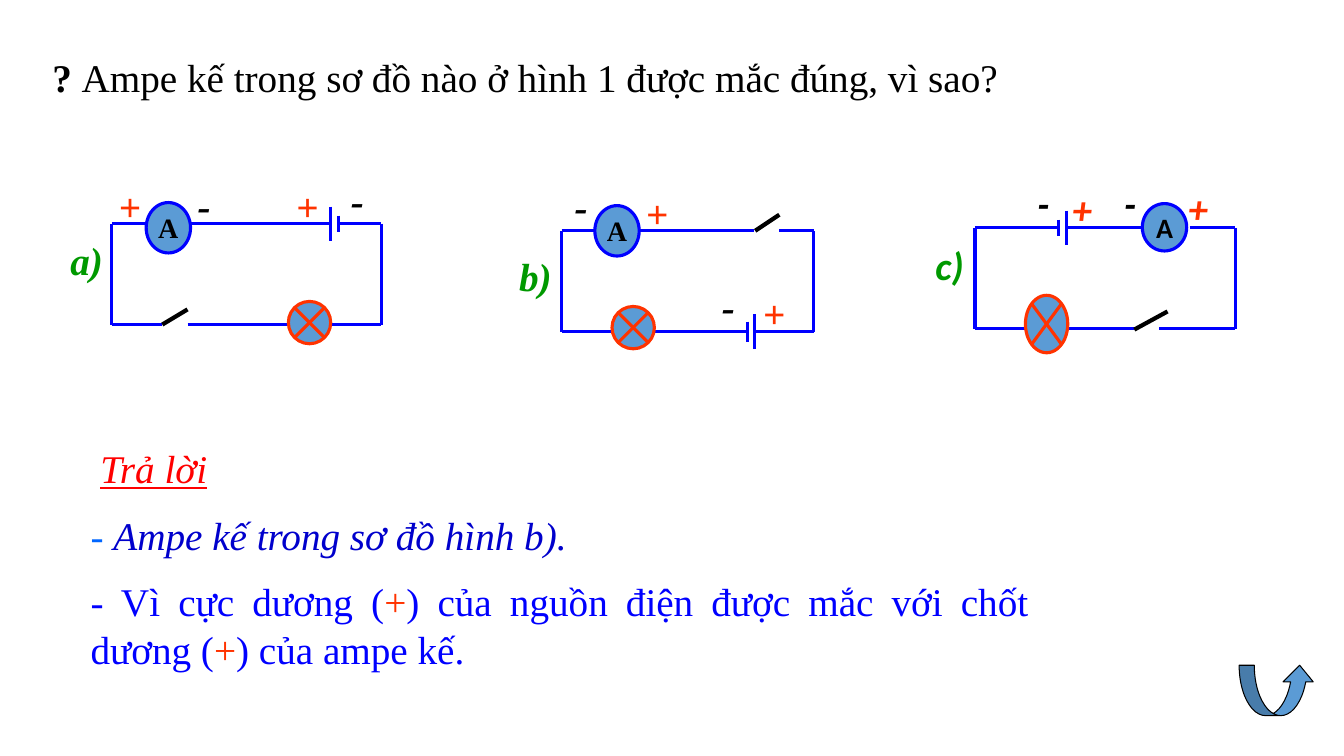
from dataclasses import dataclass

from lxml.etree import SubElement
from pptx import Presentation
from pptx.dml.color import RGBColor
from pptx.enum.shapes import MSO_CONNECTOR, MSO_SHAPE
from pptx.enum.text import MSO_ANCHOR, PP_ALIGN
from pptx.oxml.ns import qn
from pptx.util import Inches, Pt


@dataclass(frozen=True)
class Theme:
    serif: str = "Times New Roman"
    sans: str = "Calibri"
    ink: str = "000000"
    wire: str = "0000FF"
    fill: str = "5B9BD5"
    plus: str = "FF3300"
    label: str = "009900"
    heading: str = "FF0000"
    dash: str = "0066FF"
    answer: str = "0000CC"
    body_size: int = 28
    meter_size: int = 20
    wire_width: float = 2.25
    switch_width: float = 3
    arrow_width: float = 0.75


THEME = Theme()


@dataclass(frozen=True)
class Circuit:
    """One diagram; all inner places are inches from its top left corner."""
    label: str
    label_at: tuple
    font: str
    corner: tuple
    width: float
    top_wires: tuple
    bottom_wires: tuple
    switch: tuple   # from x, y to x, y
    battery: tuple  # short plate x, long plate x, y, half of short plate
    meter: tuple    # left, top, width, height
    lamp: tuple
    pluses: tuple
    minuses: tuple


CIRCUITS = (
    Circuit("a)", (-0.51, 0.08), THEME.serif, (1.11, 2.22), 2.67,
            top_wires=((0, 0.42), (0.75, 2.17), (2.25, 2.67)),
            bottom_wires=((0, 0.5), (0.75, 1.75), (2.17, 2.67)),
            switch=(0.5, 1, 0.75, 0.85), battery=(2.25, 2.17, 0, 0.08),
            meter=(0.34, -0.21, 0.44, 0.5), lamp=(1.75, 0.77, 0.42, 0.42),
            pluses=((-0.03, -0.41), (1.73, -0.41)),
            minuses=((0.85, -0.42), (2.37, -0.47))),
    Circuit("b)", (-0.52, 0.16), THEME.serif, (5.57, 2.29), 2.5,
            top_wires=((0, 0.33), (0.75, 1.91), (2.16, 2.5)),
            bottom_wires=((0, 0.5), (0.91, 1.83), (1.91, 2.5)),
            switch=(1.92, 0, 2.16, -0.16), battery=(1.84, 1.91, 1, 0.1),
            meter=(0.33, -0.25, 0.44, 0.5), lamp=(0.5, 0.75, 0.42, 0.42),
            pluses=((0.74, -0.41), (1.9, 0.58)),
            minuses=((0.13, -0.48), (1.59, 0.51))),
    Circuit("c)", (-0.49, 0.08), THEME.sans, (9.67, 2.26), 2.58,
            top_wires=((0, 0.83), (0.91, 1.66), (2.13, 2.58)),
            bottom_wires=((0, 0.5), (0.91, 1.58), (1.83, 2.58)),
            switch=(1.58, 1.01, 1.91, 0.83), battery=(0.83, 0.91, 0, 0.08),
            meter=(1.66, -0.24, 0.44, 0.47), lamp=(0.5, 0.67, 0.42, 0.57),
            pluses=((0.88, -0.42), (2.03, -0.43)),
            minuses=((0.62, -0.48), (1.48, -0.48))),
)


def rgb(color):
    return RGBColor.from_string(color)


def add_run(paragraph, text, color, size=THEME.body_size, font=THEME.serif,
            bold=False, italic=False, underline=False):
    run = paragraph.add_run()
    run.text = text
    run.font.name, run.font.size = font, Pt(size)
    run.font.bold, run.font.italic = bold, italic
    run.font.underline = underline
    run.font.color.rgb = rgb(color)


def clear_margins(frame):
    frame.margin_left = frame.margin_right = 0
    frame.margin_top = frame.margin_bottom = 0


def add_text_frame(slide, box):
    frame = slide.shapes.add_textbox(*map(Inches, box)).text_frame
    frame.word_wrap = True
    return frame


def add_line(slide, x1, y1, x2, y2, color=THEME.wire, width=THEME.wire_width):
    line = slide.shapes.add_connector(
        MSO_CONNECTOR.STRAIGHT, *map(Inches, (x1, y1, x2, y2)))
    line.line.color.rgb = rgb(color)
    line.line.width = Pt(width)
    SubElement(line._element.spPr, qn("a:effectLst"))


def add_symbol(slide, kind, box, outline, width=THEME.wire_width):
    symbol = slide.shapes.add_shape(kind, *map(Inches, box))
    symbol.shadow.inherit = False
    symbol.fill.solid()
    symbol.fill.fore_color.rgb = rgb(THEME.fill)
    symbol.line.color.rgb = rgb(outline)
    symbol.line.width = Pt(width)
    return symbol


def add_meter(slide, box, font):
    frame = add_symbol(slide, MSO_SHAPE.OVAL, box, THEME.wire).text_frame
    clear_margins(frame)
    frame.vertical_anchor = MSO_ANCHOR.MIDDLE
    letter = frame.paragraphs[0]
    letter.alignment = PP_ALIGN.CENTER
    add_run(letter, "A", THEME.ink, THEME.meter_size, font, bold=True)


def add_circuit(slide, circuit):
    left, top = circuit.corner

    def place(x, y, *size):
        return (left + x, top + y, *size)

    def wire(x1, y1, x2, y2, **style):
        add_line(slide, *place(x1, y1), *place(x2, y2), **style)

    for x in (0, circuit.width):
        wire(x, 0, x, 1)
    for y, wires in enumerate((circuit.top_wires, circuit.bottom_wires)):
        for start, end in wires:
            wire(start, y, end, y)
    wire(*circuit.switch, color=THEME.ink, width=THEME.switch_width)

    short_x, long_x, y, short_half = circuit.battery
    for x, half in ((short_x, short_half), (long_x, 0.17)):
        wire(x, y - half, x, y + half)

    add_meter(slide, place(*circuit.meter), circuit.font)
    add_symbol(slide, MSO_SHAPE.FLOWCHART_SUMMING_JUNCTION,
               place(*circuit.lamp), THEME.plus)

    for sign, color, spots in ((" +", THEME.plus, circuit.pluses),
                               ("-", THEME.ink, circuit.minuses)):
        for spot in spots:
            frame = add_text_frame(slide, place(*spot, 0.5, 0.47))
            clear_margins(frame)
            add_run(frame.paragraphs[0], sign, color, font=circuit.font,
                    bold=True, italic=True)

    label = add_text_frame(slide, place(*circuit.label_at, 0.67, 0.57))
    add_run(label.paragraphs[0], circuit.label, THEME.label,
            font=circuit.font, bold=True, italic=True)


def add_question(slide, box):
    question = add_text_frame(slide, box).paragraphs[0]
    add_run(question, "? ", THEME.ink, bold=True)
    add_run(question, "Ampe kế trong sơ đồ nào ở hình 1 được mắc đúng, vì sao?",
            THEME.ink)


def add_answer(slide, box):
    frame = add_text_frame(slide, box)
    heading = frame.paragraphs[0]
    choice, reason = frame.add_paragraph(), frame.add_paragraph()
    for paragraph in frame.paragraphs:
        paragraph.alignment = PP_ALIGN.JUSTIFY
    choice.space_before = reason.space_before = Pt(THEME.body_size / 2)

    add_run(heading, " ", THEME.heading, italic=True)
    add_run(heading, "Trả lời", THEME.heading, italic=True, underline=True)
    add_run(choice, "- ", THEME.dash)
    add_run(choice, "Ampe kế trong sơ đồ hình b).", THEME.answer, italic=True)
    for text in ("- Vì cực dương (", "+",
                 ") của nguồn điện được mắc với chốt dương (", "+",
                 ") của ampe kế."):
        add_run(reason, text, THEME.plus if text == "+" else THEME.wire)


def add_return_arrow(slide, box):
    arrow = add_symbol(slide, MSO_SHAPE.CURVED_UP_ARROW, box, THEME.ink,
                       THEME.arrow_width)
    for index, value in enumerate((0.3, 0.6, 0.33)):
        arrow.adjustments[index] = value


def main():
    deck = Presentation()
    deck.slide_width, deck.slide_height = Inches(13.33), Inches(7.5)
    slide = deck.slides.add_slide(deck.slide_layouts[6])
    add_question(slide, (0.42, 0.48, 12.09, 0.57))
    for circuit in CIRCUITS:
        add_circuit(slide, circuit)
    add_answer(slide, (0.8, 4.36, 9.5, 2.46))
    add_return_arrow(slide, (12.29, 6.6, 0.75, 0.5))
    deck.save("out.pptx")


if __name__ == "__main__":
    main()
